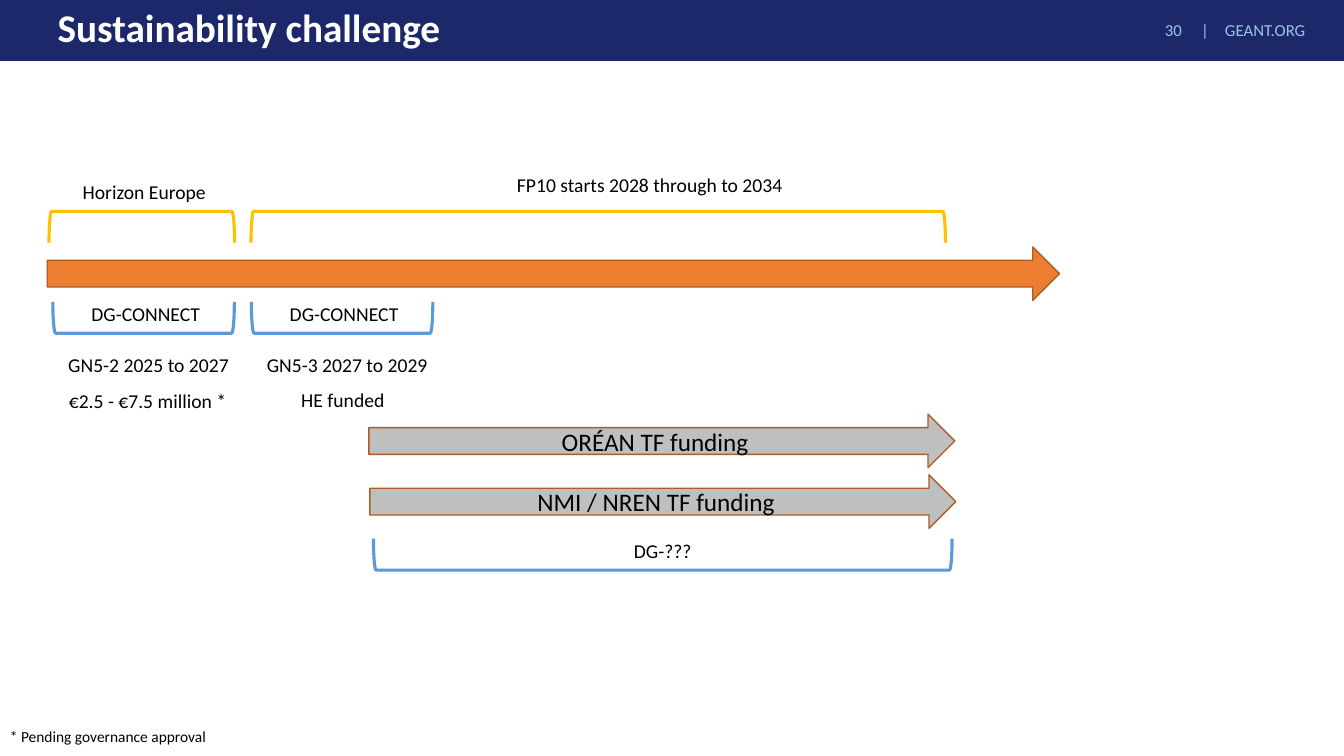
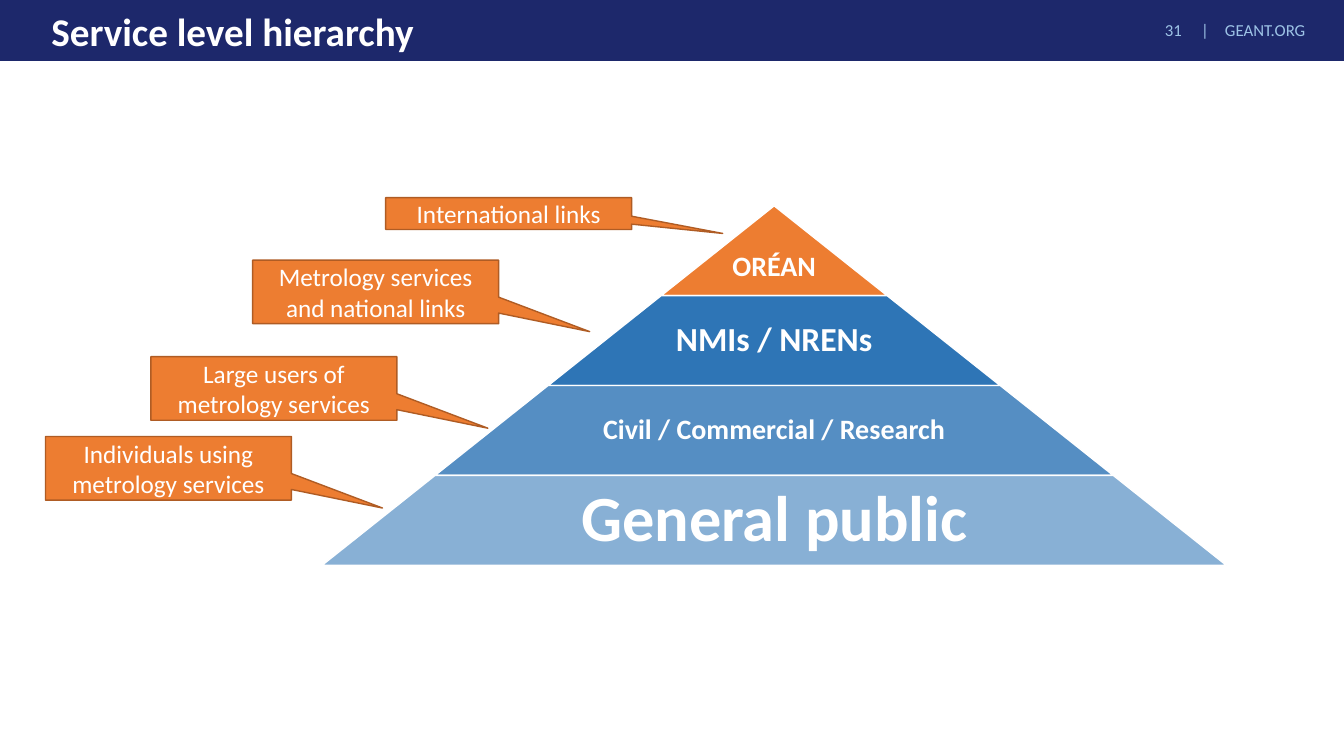
import dataclasses

import lxml.etree
import pptx
import pptx.dml.color
import pptx.enum.shapes
import pptx.enum.text
import pptx.oxml.ns
import pptx.util

Pt = pptx.util.Pt
Preset = pptx.enum.shapes.MSO_SHAPE
Align = pptx.enum.text.PP_ALIGN
Anchor = pptx.enum.text.MSO_ANCHOR


@dataclasses.dataclass(frozen=True)
class Theme:
    font: str = "Calibri"
    navy: str = "1D286B"
    pale_blue: str = "9DC3E6"
    white: str = "FFFFFF"
    black: str = "000000"
    orange: str = "ED7D31"
    dark_orange: str = "AF5C24"
    gray: str = "BFBFBF"
    yellow: str = "FFC000"
    blue: str = "5B9BD5"
    deep_blue: str = "2E75B6"
    title_size: float = 28
    shape_size: float = 18
    label_size: float = 14
    header_size: float = 12
    note_size: float = 11
    top_level_size: float = 20
    second_level_size: float = 24
    third_level_size: float = 20
    base_level_size: float = 46
    thin_line: float = 1
    bracket_line: float = 2.25


THEME = Theme()
SLIDE_WIDTH = 960
SLIDE_HEIGHT = 540


def color(value):
    return pptx.dml.color.RGBColor.from_string(value)


def write(shape, text, size, text_color, align=Align.CENTER, bold=False,
          anchor=Anchor.MIDDLE, wrap=True):
    frame = shape.text_frame
    frame.word_wrap = wrap
    frame.auto_size = pptx.enum.text.MSO_AUTO_SIZE.NONE
    frame.vertical_anchor = anchor
    for index, line in enumerate(text.split("\n")):
        paragraph = frame.add_paragraph() if index else frame.paragraphs[0]
        paragraph.alignment = align
        run = paragraph.add_run()
        run.text = line
        run.font.name = THEME.font
        run.font.size = Pt(size)
        run.font.bold = bold
        run.font.color.rgb = color(text_color)


def add_preset(slide, preset, box, fill=None, line=None,
               line_width=THEME.thin_line):
    shape = slide.shapes.add_shape(preset, *map(Pt, box))
    shape.shadow.inherit = False
    if fill:
        shape.fill.solid()
        shape.fill.fore_color.rgb = color(fill)
    else:
        shape.fill.background()
    if line:
        shape.line.color.rgb = color(line)
        shape.line.width = Pt(line_width)
    else:
        shape.line.fill.background()
    return shape


def add_label(slide, text, left, top, width, size=THEME.label_size,
              align=Align.CENTER):
    label = slide.shapes.add_textbox(Pt(left), Pt(top), Pt(width), Pt(24.5))
    write(label, text, size, THEME.black, align, anchor=Anchor.TOP)


def add_bracket(slide, left, top, width, rotation, line):
    depth = 22.4
    box = (left + (width - depth) / 2, top + (depth - width) / 2, depth, width)
    bracket = add_preset(slide, Preset.LEFT_BRACKET, box, line=line,
                         line_width=THEME.bracket_line)
    bracket.rotation = rotation


def add_arrow(slide, left, top, width, fill, text=""):
    arrow = add_preset(slide, Preset.RIGHT_ARROW, (left, top, width, 38.2),
                       fill, THEME.dark_orange)
    if text:
        write(arrow, text, THEME.shape_size, THEME.black)


def add_callout(slide, text, left, top, height):
    callout = add_preset(slide, Preset.RECTANGULAR_CALLOUT,
                         (left, top, 175.7, height),
                         THEME.orange, THEME.dark_orange)
    callout.adjustments[0] = 0.87
    callout.adjustments[1] = 0.625
    write(callout, text, THEME.shape_size, THEME.white)


def add_pyramid(slide, levels, center, top, width_step, height):
    for number, (text, size, fill, opacity) in enumerate(levels, start=1):
        width = number * width_step
        box = (center - width / 2, top + (number - 1) * height, width, height)
        level = add_preset(slide, Preset.TRAPEZOID, box, fill, THEME.white)
        level.adjustments[0] = width_step / 2 / height
        if opacity < 100:
            fill_color = level.element.spPr.find(
                ".//" + pptx.oxml.ns.qn("a:srgbClr"))
            lxml.etree.SubElement(fill_color, pptx.oxml.ns.qn("a:alpha"),
                                  val=str(opacity * 1000))
        write(level, text, size, THEME.white, bold=True, wrap=False)
        frame = level.text_frame
        frame.margin_left = frame.margin_right = frame.margin_top = 0
        frame.margin_bottom = 0
        if number > 1:
            frame.margin_bottom = Pt(height / 3 / number)
            frame.paragraphs[0].line_spacing = 0.9


def add_header(slide, number):
    band = add_preset(slide, Preset.RECTANGLE, (0, -3, SLIDE_WIDTH, 46.6),
                      THEME.navy)
    band.element.getparent().insert(2, band.element)
    header = slide.shapes.add_textbox(Pt(832), Pt(11), Pt(120), Pt(21))
    header.text_frame.margin_left = 0
    properties = header.text_frame.paragraphs[0]._p.get_or_add_pPr()
    tabs = lxml.etree.SubElement(properties, pptx.oxml.ns.qn("a:tabLst"))
    for position in (26, 43):
        lxml.etree.SubElement(tabs, pptx.oxml.ns.qn("a:tab"),
                              pos=str(Pt(position)), algn="l")
    write(header, f"{number}\t|\tGEANT.ORG", THEME.header_size,
          THEME.pale_blue, Align.LEFT)


def add_slide(presentation, title_text, number, title_left, title_top):
    slide = presentation.slides.add_slide(presentation.slide_layouts[5])
    title = slide.shapes.title
    title.left, title.top = Pt(title_left), Pt(title_top)
    title.width, title.height = Pt(779), Pt(48)
    write(title, title_text, THEME.title_size, THEME.white, Align.LEFT, True)
    title.text_frame.paragraphs[0].line_spacing = 0.9
    add_header(slide, number)
    return slide


def build_challenge(presentation):
    slide = add_slide(presentation, "Sustainability challenge", 30, 34, -3)
    add_arrow(slide, 33.8, 176.4, 723, THEME.orange)
    add_arrow(slide, 263.5, 295.9, 418.5, THEME.gray, "ORÉAN TF funding")
    add_arrow(slide, 264.2, 339.2, 418.5, THEME.gray, "NMI / NREN TF funding")
    for left, top, width, rotation, line in (
        (35, 151, 132.5, 90, THEME.yellow),
        (179.3, 151, 496, 90, THEME.yellow),
        (37.8, 215.6, 129.6, 270, THEME.blue),
        (179.6, 215.6, 129.6, 270, THEME.blue),
        (266.8, 384.8, 413.3, 270, THEME.blue),
    ):
        add_bracket(slide, left, top, width, rotation, line)
    for text, left, top, width in (
        ("Horizon Europe", 35.8, 125, 134.6),
        ("FP10 starts 2028 through to 2034", 254.2, 120, 420),
        ("DG-CONNECT", 35.3, 212, 137.5),
        ("DG-CONNECT", 177, 212, 137.5),
        ("GN5-2 2025 to 2027", 37.4, 248.4, 137.5),
        ("GN5-3 2027 to 2029", 179.3, 248.4, 137.5),
        ("€2.5 - €7.5 million *", 36.7, 274.3, 137.5),
        ("HE funded", 176.2, 273.6, 137.5),
        ("DG-???", 269.3, 381.6, 408.2),
    ):
        add_label(slide, text, left, top, width)
    add_label(slide, "* Pending governance approval", 0, 515.5, 199.4,
              THEME.note_size, Align.LEFT)


def build_hierarchy(presentation):
    slide = add_slide(presentation, "Service level hierarchy", 31, 29.5, 0)
    levels = (
        ("ORÉAN", THEME.top_level_size, THEME.orange, 100),
        ("NMIs / NRENs", THEME.second_level_size, THEME.deep_blue, 100),
        ("Civil / Commercial / Research", THEME.third_level_size,
         THEME.deep_blue, 81),
        ("General public", THEME.base_level_size, THEME.deep_blue, 57),
    )
    add_pyramid(slide, levels, center=553, top=147, width_step=161.5,
                height=64.2)
    for text, left, top, height in (
        ("International links", 275.5, 141.2, 22.7),
        ("Metrology services\nand national links", 180.5, 185.8, 45.4),
        ("Large users of metrology services", 107.8, 254.8, 45.4),
        ("Individuals using metrology services", 32.5, 311.8, 45.4),
    ):
        add_callout(slide, text, left, top, height)


def main():
    presentation = pptx.Presentation()
    presentation.slide_width = Pt(SLIDE_WIDTH)
    presentation.slide_height = Pt(SLIDE_HEIGHT)
    build_challenge(presentation)
    build_hierarchy(presentation)
    presentation.save("out.pptx")


if __name__ == "__main__":
    main()
